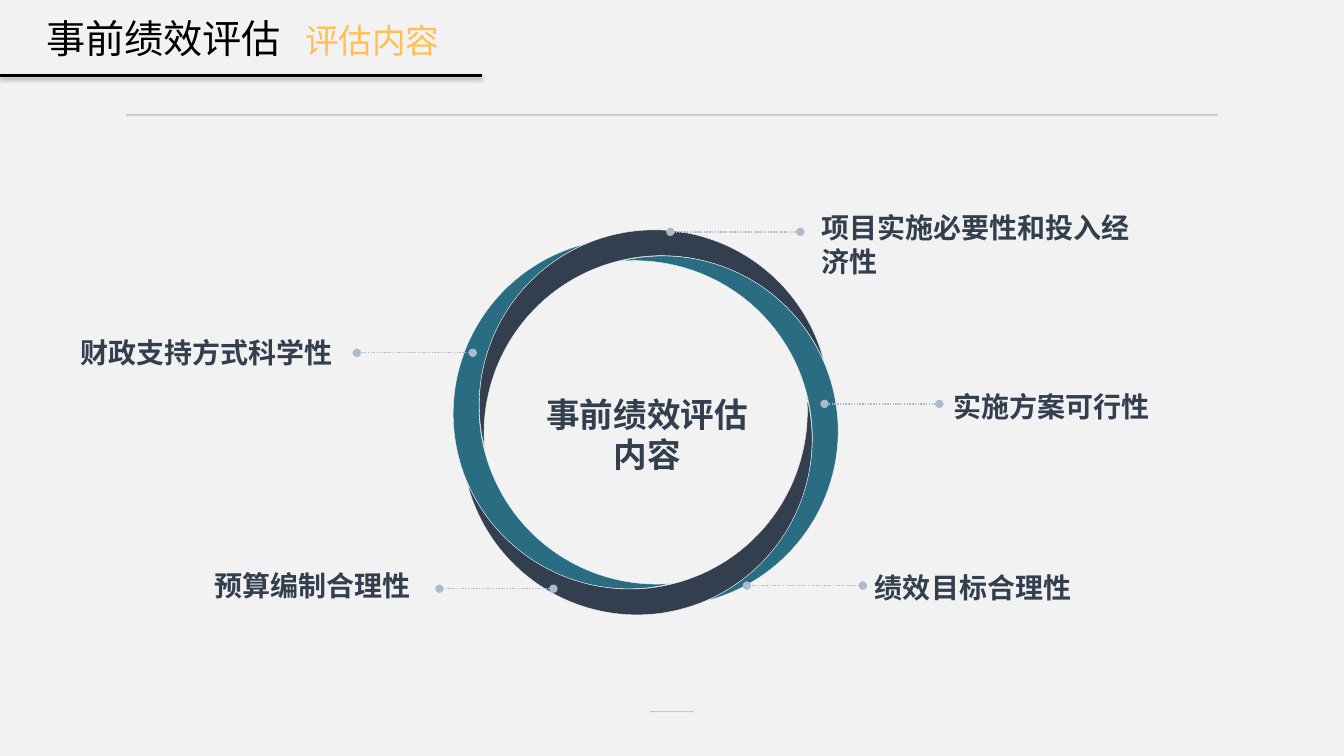
from dataclasses import dataclass
from lxml import etree
from pptx import Presentation
from pptx.dml.color import RGBColor
from pptx.enum import dml, shapes, text
from pptx.oxml import ns
from pptx.util import Pt


@dataclass(frozen=True)
class Theme:
    back: str = "F2F2F2"
    dark: str = "333F4F"
    teal: str = "2A6D83"
    edge: str = "F8F8F8"
    dots: str = "ADBACA"
    black: str = "000000"
    gold: str = "FFBF53"
    grey: str = "BFBFBF"
    white: str = "FFFFFF"
    font: str = "Arial"
    head: str = "Noto Sans CJK SC"
    big: int = 28
    mid: int = 24
    small: int = 20


T = Theme()


def rgb(code):
    return RGBColor.from_string(code)


def sub(node, tag, **attrs):
    return etree.SubElement(node, ns.qn(tag), attrs)


def style(font, size, color, name, bold=False):
    font.size, font.name, font.bold = Pt(size), name, bold
    font.color.rgb = rgb(color)


def frame(shape, inset=(0, 0)):
    tf = shape.text_frame
    tf.word_wrap = True
    tf.auto_size = text.MSO_AUTO_SIZE.NONE
    tf.vertical_anchor = text.MSO_ANCHOR.TOP
    tf.margin_left = tf.margin_right = Pt(inset[0])
    tf.margin_top = tf.margin_bottom = Pt(inset[1])
    return tf


def add_text(slide, box, words, size, align=text.PP_ALIGN.LEFT, inset=(0, 0)):
    shape = slide.shapes.add_textbox(*map(Pt, box))
    p = frame(shape, inset).paragraphs[0]
    p.text, p.alignment = words, align
    style(p.font, size, T.dark, T.font, True)


def add_line(slide, x1, x2, y, color, width):
    line = slide.shapes.add_connector(
        shapes.MSO_CONNECTOR.STRAIGHT, Pt(x1), Pt(y), Pt(x2), Pt(y))
    line.line.color.rgb = rgb(color)
    line.line.width = Pt(width)
    return line, sub(line._element.spPr, "a:effectLst")


def add_bar(slide, box):
    bar = slide.shapes.add_shape(
        shapes.MSO_SHAPE.ROUNDED_RECTANGLE, *map(Pt, box))
    bar.shadow.inherit = False
    bar.adjustments[0] = 0.5
    bar.line.fill.background()
    bar.fill.gradient()
    bar.fill.gradient_angle = 270
    for stop, color, place in zip(bar.fill.gradient_stops, (T.grey, T.white), (0, 1)):
        stop.color.rgb, stop.position = rgb(color), place


def add_head(slide, box, main, topic):
    x, y, w, h = box
    title = slide.shapes.title
    title.left, title.top, title.width, title.height = map(
        Pt, (x + 33, y + 10, w - 33, h - 14))
    p = frame(title).paragraphs[0]
    p.alignment = text.PP_ALIGN.LEFT
    # Tab stop that sets the topic apart from the main title
    tabs = sub(p._p.get_or_add_pPr(), "a:tabLst")
    sub(tabs, "a:tab", pos=str(Pt(185)), algn="l")
    for words, size, color in ((main + "\t", T.big, T.black), (topic, T.mid, T.gold)):
        run = p.add_run()
        run.text = words
        style(run.font, size, color, T.head)
    # Rule with a soft shadow
    _, effects = add_line(slide, x, x + w, y + h, T.black, 2)
    glow = sub(effects, "a:outerShdw", blurRad=str(Pt(3.1)), dist=str(Pt(1.6)),
               dir="5400000", algn="t", rotWithShape="0")
    sub(sub(glow, "a:srgbClr", val=T.black), "a:alpha", val="38000")


def add_ring(slide, box, words):
    x, y, w, h = box
    mx, my = x + w / 2, y + h / 2
    dx, dy = -73, 9
    mw, mh = 125.2, 250.2
    # Four moons, each a quarter turn on from the last
    for i in range(4):
        moon = slide.shapes.add_shape(
            shapes.MSO_SHAPE.MOON, Pt(mx + dx - mw / 2), Pt(my + dy - mh / 2),
            Pt(mw), Pt(mh))
        moon.shadow.inherit = False
        moon.adjustments[0] = 0.152
        moon.rotation = (345.9 + 90 * i) % 360
        moon.fill.solid()
        moon.fill.fore_color.rgb = rgb((T.teal, T.dark)[i % 2])
        moon.line.color.rgb = rgb(T.edge)
        moon.line.width = Pt(0.25)
        dx, dy = -dy, dx
    add_text(slide, (mx - 82, my - 24, 166, 66), words, T.mid,
             text.PP_ALIGN.CENTER, (7.2, 3.6))


def add_label(slide, box, words, start, end, y):
    add_text(slide, box, words, T.small)
    line, _ = add_line(slide, start, end, y, T.dots, 1)
    line.line.dash_style = dml.MSO_LINE.ROUND_DOT
    ln = line.line._get_or_add_ln()
    for tag in ("a:headEnd", "a:tailEnd"):
        sub(ln, tag, type="oval")


# Text box, words, then leader start, end and height
LABELS = [
    ((586.8, 150.5, 232.5, 48), "项目实施必要性和投入经济性", 571.7, 478.8, 165.6),
    ((681, 278, 232.5, 24.5), "实施方案可行性", 671, 589, 288.5),
    ((625, 407.5, 232.5, 24.5), "绩效目标合理性", 616.3, 533.5, 418.3),
    ((57.6, 239.8, 190, 24.5), "财政支持方式科学性", 337.7, 254.9, 252),
    ((153.4, 406, 150, 24.5), "预算编制合理性", 395.3, 313.9, 420.5),
]


def main():
    prs = Presentation()
    prs.slide_width, prs.slide_height = Pt(960), Pt(540)
    slide = prs.slides.add_slide(prs.slide_layouts[5])
    slide.background.fill.solid()
    slide.background.fill.fore_color.rgb = rgb(T.back)
    # Page rules
    add_bar(slide, (90, 81.4, 780.5, 3))
    add_bar(slide, (464.4, 508, 31, 1.4))
    # Ring and its labels
    add_ring(slide, (324, 164.7, 274.4, 274), "事前绩效评估内容")
    for label in LABELS:
        add_label(slide, *label)
    # Heading
    add_head(slide, (0, 0, 344.2, 54), "事前绩效评估", "评估内容")
    prs.save("out.pptx")


if __name__ == "__main__":
    main()
